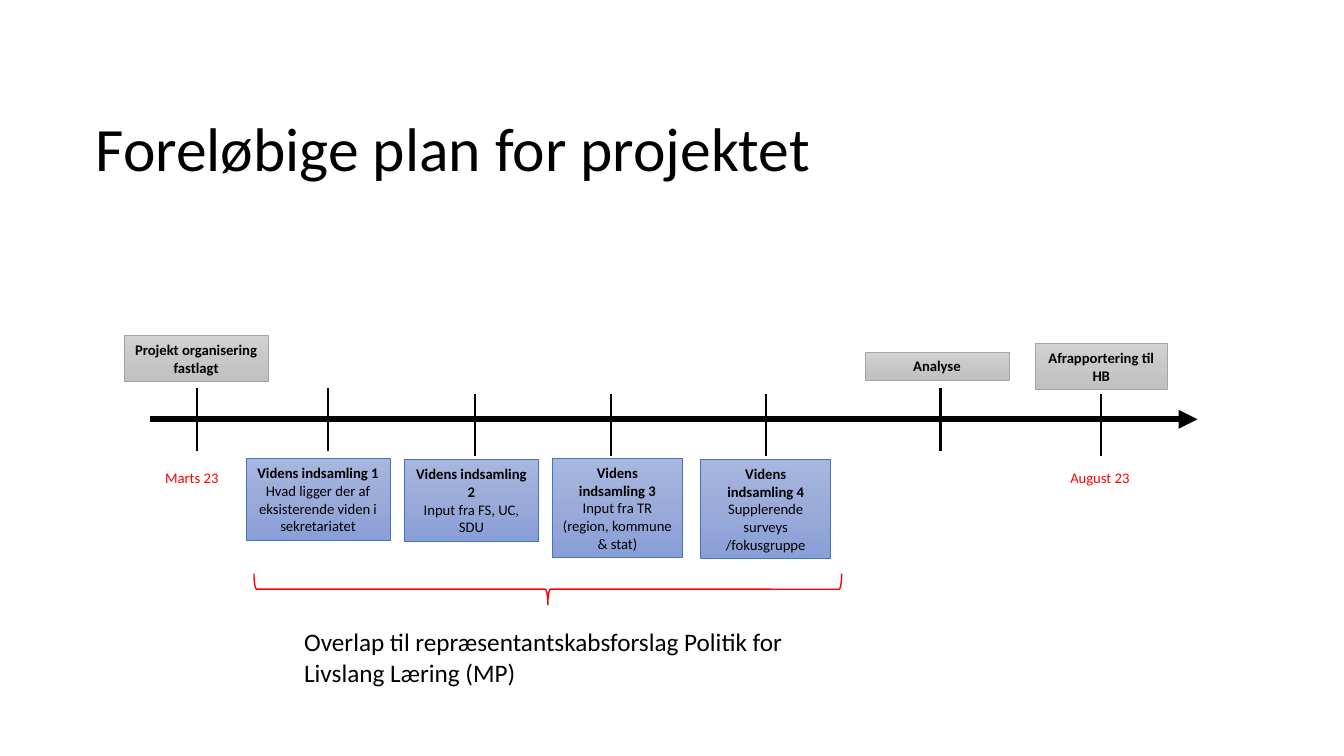
from copy import deepcopy

from lxml import etree
from pptx import Presentation
from pptx.dml.color import RGBColor
from pptx.enum.shapes import MSO_CONNECTOR, MSO_SHAPE
from pptx.enum.text import MSO_ANCHOR, MSO_AUTO_SIZE, PP_ALIGN
from pptx.oxml.ns import qn
from pptx.util import Pt

STRAIGHT = MSO_CONNECTOR.STRAIGHT
RECTANGLE = MSO_SHAPE.RECTANGLE
RIGHT_BRACE = MSO_SHAPE.RIGHT_BRACE
MIDDLE = MSO_ANCHOR.MIDDLE
GROW = MSO_AUTO_SIZE.SHAPE_TO_FIT_TEXT
FIXED = MSO_AUTO_SIZE.NONE
CENTER = PP_ALIGN.CENTER
LEFT = PP_ALIGN.LEFT

BLACK = "000000"
RED = "FF0000"
# Three gradient colours from top to bottom, then the outline
GREY_STYLE = (("D2D2D2", "C8C8C8", "C0C0C0"), "A5A5A5")
BLUE_STYLE = (("A8B7DF", "9AABD9", "889ED7"), "4472C4")

AXIS_Y = 299.5
TICK_HEIGHT = 44.5
# x, top
TICKS = [(140.4, 277.4), (234, 277.4), (339.1, 281.5), (436.3, 281.5),
         (547.2, 281.5), (671.8, 277.4), (786.2, 281.5)]
# left, top, width, height, heading
MILESTONES = [
    (88.6, 239.8, 103, 32.6, "Projekt organisering fastlagt"),
    (617.8, 251.4, 103, 20, "Analyse"),
    (739.4, 245.6, 94.5, 32.6, "Afrapportering til HB"),
]
# left, top, width, height, heading, detail
COLLECTIONS = [
    (175.7, 327.5, 103, 58.6, "Videns indsamling 1",
     "Hvad ligger der af eksisterende viden i sekretariatet"),
    (288.7, 328.2, 96, 58.6, "Videns indsamling 2", "Input fra FS, UC, SDU"),
    (394.5, 327.5, 93, 70.8, "Videns indsamling 3",
     "Input fra TR (region, kommune & stat)"),
    (500.6, 328.2, 92.7, 70.8, "Videns indsamling 4",
     "Supplerende surveys /fokusgruppe"),
]
# left, width, date
DATES = [(110.9, 56.2, "Marts 23"), (757.4, 58.3, "August 23")]


def color(hex_code):
    return RGBColor.from_string(hex_code)


class TimelineSlide:
    font = "Calibri"
    small = 10.5

    def __init__(self, slide):
        self.shapes = slide.shapes

    def set_text(self, shape, lines, size, ink=BLACK, align=LEFT, bold_first=False):
        frame = shape.text_frame
        frame.word_wrap = True
        frame.text = "\n".join(lines)
        for index, paragraph in enumerate(frame.paragraphs):
            paragraph.alignment = align
            font = paragraph.runs[0].font
            font.name = self.font
            font.size = Pt(size)
            font.bold = bold_first and index == 0
            font.color.rgb = color(ink)
        return frame

    def label(self, left, top, width, height, text, size, ink=BLACK):
        box = self.shapes.add_textbox(Pt(left), Pt(top), Pt(width), Pt(height))
        frame = self.set_text(box, [text], size, ink)
        frame.auto_size = GROW
        return frame

    def title(self, text):
        frame = self.label(61.2, 56.2, 828, 104.4, text, 44)
        frame.auto_size = FIXED
        frame.vertical_anchor = MIDDLE
        frame.paragraphs[0].line_spacing = 0.9

    def line(self, x1, y1, x2, y2, weight, arrow=False):
        connector = self.shapes.add_connector(STRAIGHT, Pt(x1), Pt(y1), Pt(x2), Pt(y2))
        connector.line.color.rgb = color(BLACK)
        connector.line.width = Pt(weight)
        properties = connector._element.spPr
        if arrow:
            outline = properties.find(qn("a:ln"))
            etree.SubElement(outline, qn("a:tailEnd"), type="triangle")
        etree.SubElement(properties, qn("a:effectLst"))

    def card(self, left, top, width, height, lines, style):
        shades, outline = style
        card = self.shapes.add_shape(RECTANGLE, Pt(left), Pt(top), Pt(width), Pt(height))
        card.shadow.inherit = False
        card.fill.gradient()
        card.fill.gradient_angle = 270
        stop_list = next(card._element.spPr.iter(qn("a:gsLst")))
        stop_list.insert(1, deepcopy(stop_list[0]))
        for index, shade in enumerate(shades):
            stop = card.fill.gradient_stops[index]
            stop.position = index / 2
            stop.color.rgb = color(shade)
        card.line.color.rgb = color(outline)
        card.line.width = Pt(0.5)
        frame = self.set_text(card, lines, self.small, align=CENTER, bold_first=True)
        frame.auto_size = GROW

    def brace_below(self, left, top, width, height):
        """Draw a brace opening upwards within the given visible bounds."""
        shift = (width - height) / 2
        brace = self.shapes.add_shape(
            RIGHT_BRACE, Pt(left + shift), Pt(top - shift), Pt(height), Pt(width))
        brace.rotation = 90
        brace.shadow.inherit = False
        brace.fill.background()
        brace.line.color.rgb = color(RED)
        brace.line.width = Pt(1)


def main():
    deck = Presentation()
    deck.slide_width, deck.slide_height = Pt(960), Pt(540)
    plan = TimelineSlide(deck.slides.add_slide(deck.slide_layouts[6]))

    plan.title("Foreløbige plan for projektet")
    plan.line(107.3, AXIS_Y, 855.4, AXIS_Y, 4.5, arrow=True)
    for x, top in TICKS:
        plan.line(x, top, x, top + TICK_HEIGHT, 1.5)
    for *bounds, heading in MILESTONES:
        plan.card(*bounds, [heading], GREY_STYLE)
    for *bounds, heading, detail in COLLECTIONS:
        plan.card(*bounds, [heading, detail], BLUE_STYLE)

    plan.brace_below(181.4, 409.7, 419.8, 22.3)
    plan.label(210.2, 444.2, 369.4, 50.9,
               "Overlap til repræsentantskabsforslag Politik for Livslang Læring (MP)", 18)
    for left, width, date in DATES:
        plan.label(left, 331.2, width, 20, date, plan.small, RED)

    deck.save("out.pptx")


if __name__ == "__main__":
    main()
